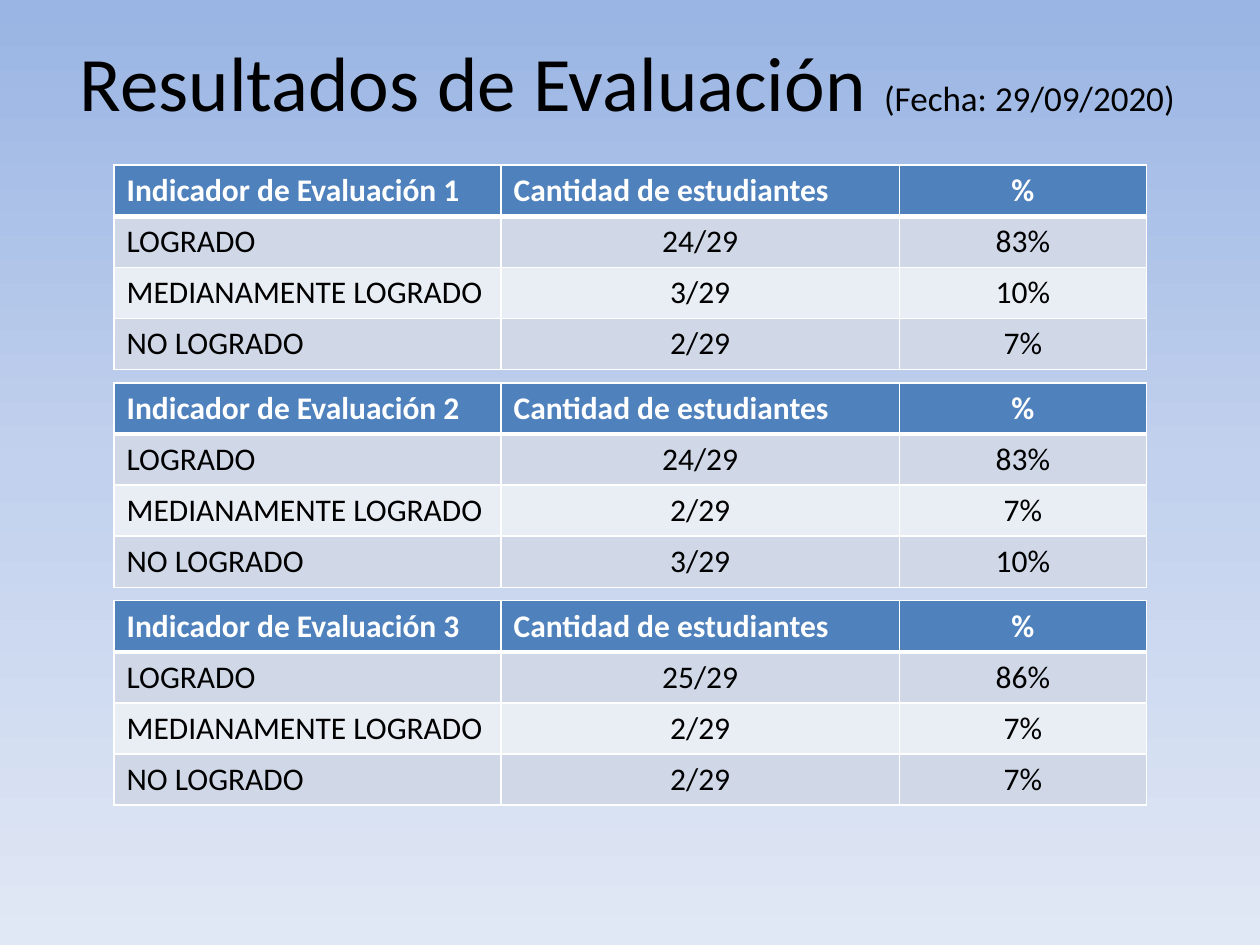
from copy import deepcopy

from lxml.etree import SubElement
from pptx import Presentation
from pptx.dml.color import RGBColor
from pptx.enum.text import MSO_ANCHOR, PP_ALIGN
from pptx.oxml import parse_xml
from pptx.oxml.ns import nsdecls, qn
from pptx.util import Cm, Pt

COLORS = {
    "text": "000000",
    "white": "FFFFFF",
    "header": "4F81BD",
    "band_dark": "D0D8E8",
    "band_light": "E9EDF4",
}
BACKGROUND = [(0, "9AB5E4"), (0.5, "C2D1ED"), (1, "E1E8F5")]
FONT = "Calibri"
COLUMNS = [7.8, 8.03, 4.98]
ROW_HEIGHT = 1.03
LEVELS = ["LOGRADO", "MEDIANAMENTE LOGRADO", "NO LOGRADO"]
RESULTS = [
    [("24/29", "83%"), ("3/29", "10%"), ("2/29", "7%")],
    [("24/29", "83%"), ("2/29", "7%"), ("3/29", "10%")],
    [("25/29", "86%"), ("2/29", "7%"), ("2/29", "7%")],
]


def add_text(p, text, size=18, color="text", bold=False, align=PP_ALIGN.LEFT):
    """Add a formatted run to a paragraph."""
    p.alignment = align
    r = p.add_run()
    r.text = text
    r.font.name = FONT
    r.font.size = Pt(size)
    r.font.bold = bold
    r.font.color.rgb = RGBColor.from_string(COLORS[color])


def set_background(s):
    """Fill the slide with a three-stop vertical gradient."""
    fill = s.background.fill
    fill.gradient()
    fill.gradient_angle = 270
    stops = s.element.find(".//" + qn("a:gsLst"))
    stops.append(deepcopy(stops[-1]))
    for stop, (position, color) in zip(fill.gradient_stops, BACKGROUND):
        stop.position = position
        stop.color.rgb = RGBColor.from_string(color)


def set_borders(cell, top=1, bottom=1):
    """Draw white borders, with the top and bottom widths in points."""
    tcPr = cell._tc.get_or_add_tcPr()
    widths = {"lnL": 1, "lnR": 1, "lnT": top, "lnB": bottom}
    for i, (tag, width) in enumerate(widths.items()):
        ln = parse_xml(f'<a:{tag} {nsdecls("a")} w="{Pt(width)}"/>')
        line_fill = SubElement(ln, qn("a:solidFill"))
        SubElement(line_fill, qn("a:srgbClr"), val=COLORS["white"])
        tcPr.insert(i, ln)


def add_title(s, left, top, width, height):
    """Place the title with its smaller date."""
    tf = s.shapes.add_textbox(Cm(left), Cm(top), Cm(width), Cm(height)).text_frame
    tf.word_wrap = True
    tf.vertical_anchor = MSO_ANCHOR.MIDDLE
    p = tf.paragraphs[0]
    add_text(p, "Resultados de Evaluación ", size=44, align=PP_ALIGN.CENTER)
    add_text(p, "(Fecha: 29/09/2020) ", size=20, align=PP_ALIGN.CENTER)


def add_indicator(s, left, top, number, results):
    """Place the results table of one evaluation indicator."""
    rows = [(f"Indicador de Evaluación {number}", "Cantidad de estudiantes", "%")]
    rows += [(level, *values) for level, values in zip(LEVELS, results)]
    table = s.shapes.add_table(
        len(rows), len(COLUMNS), Cm(left), Cm(top),
        Cm(sum(COLUMNS)), Cm(ROW_HEIGHT * len(rows)),
    ).table
    for column, width in zip(table.columns, COLUMNS):
        column.width = Cm(width)
    for i, row in enumerate(rows):
        header = i == 0
        fill = "header" if header else "band_dark" if i % 2 else "band_light"
        for j, text in enumerate(row):
            cell = table.cell(i, j)
            cell.fill.solid()
            cell.fill.fore_color.rgb = RGBColor.from_string(COLORS[fill])
            set_borders(cell, top=3 if i == 1 else 1, bottom=3 if header else 1)
            centered = j == 2 or (j == 1 and not header)
            add_text(
                cell.text_frame.paragraphs[0], text, bold=header,
                color="white" if header else "text",
                align=PP_ALIGN.CENTER if centered else PP_ALIGN.LEFT,
            )


def main():
    """Build and save the slide."""
    prs = Presentation()
    prs.slide_width, prs.slide_height = Cm(25.4), Cm(19.05)
    s = prs.slides.add_slide(prs.slide_layouts[6])
    set_background(s)
    add_title(s, 1.3, 0.33, 22.86, 2.6)
    for i, results in enumerate(RESULTS):
        add_indicator(s, 2.3, 3.33 + 4.39 * i, i + 1, results)
    prs.save("out.pptx")


if __name__ == "__main__":
    main()
